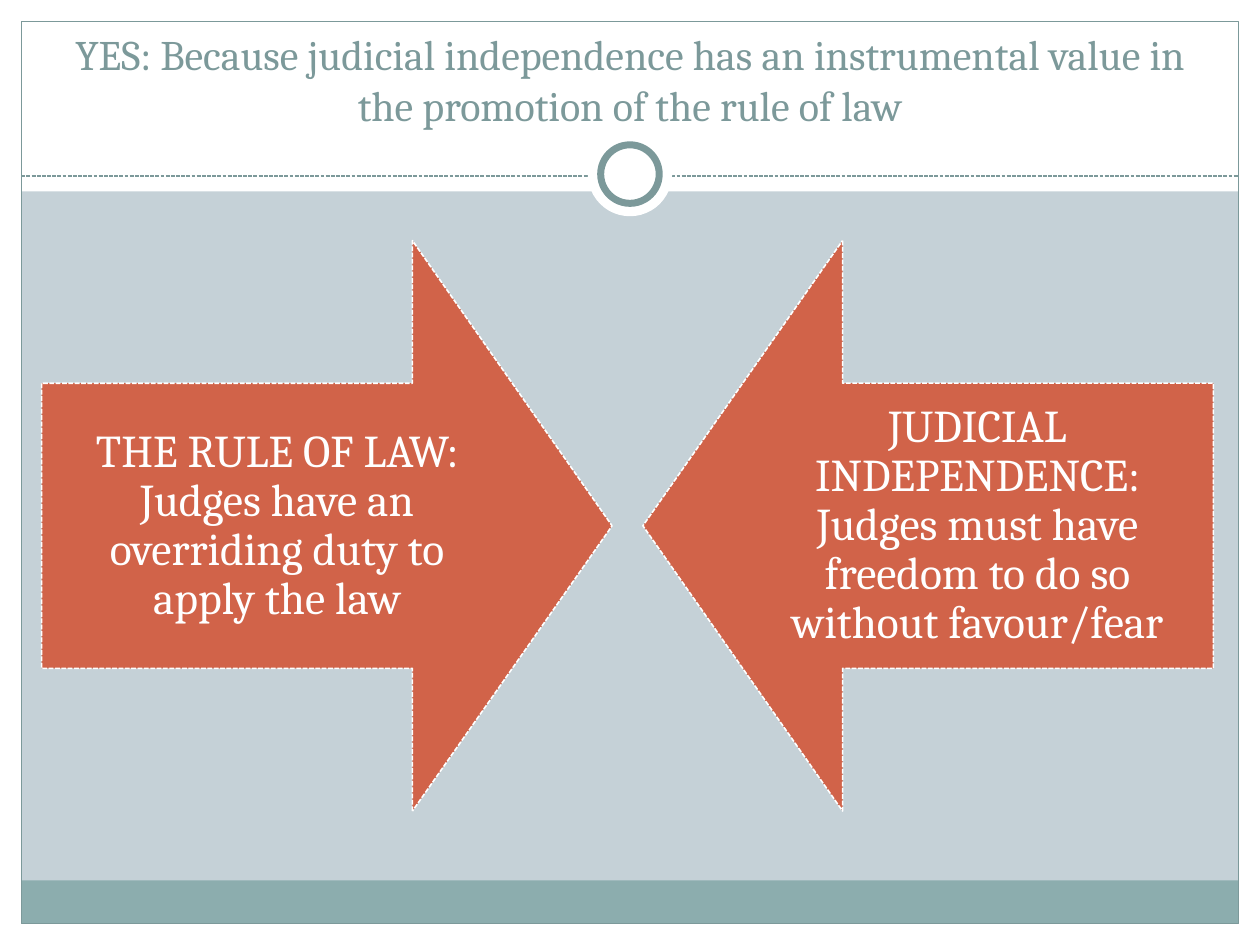
"""Build a slide with two facing arrows on judicial independence and the rule of law."""
import pptx
import pptx.dml.color
import pptx.enum.dml
import pptx.enum.shapes
import pptx.enum.text
import pptx.oxml
import pptx.util
from pptx.util import Cm

COLORS = {"background": "C5D1D7", "white": "FFFFFF", "band": "8CADAE",
          "trim": "7C999A", "arrow": "D16349"}
SHAPES = pptx.enum.shapes.MSO_SHAPE
ANCHORS = pptx.enum.text.MSO_ANCHOR
DASH = pptx.enum.dml.MSO_LINE.SQUARE_DOT
WIDTH, HEIGHT, MARGIN = 25.4, 19.05, 0.43

deck = pptx.Presentation()
deck.slide_width, deck.slide_height = Cm(WIDTH), Cm(HEIGHT)
page = deck.slides.add_slide(deck.slide_layouts[6])
page.background.fill.solid()
page.background.fill.fore_color.rgb = pptx.dml.color.RGBColor.from_string(COLORS["background"])


def add_figure(kind, left, top, width, height, fill=None, line=None, weight=0.75):
    figure = page.shapes.add_shape(kind, Cm(left), Cm(top), Cm(width), Cm(height))
    figure.shadow.inherit = False
    if fill:
        figure.fill.solid()
        figure.fill.fore_color.rgb = pptx.dml.color.RGBColor.from_string(COLORS[fill])
    else:
        figure.fill.background()
    if line:
        figure.line.color.rgb = pptx.dml.color.RGBColor.from_string(COLORS[line])
        figure.line.width = pptx.util.Pt(weight)
    else:
        figure.line.fill.background()
    return figure


def add_text(text, *, left, top, width, height, size, color, anchor,
             inset=(0.25, 0.13), spacing=None):
    box = page.shapes.add_textbox(Cm(left), Cm(top), Cm(width), Cm(height))
    frame = box.text_frame
    frame.word_wrap = True
    frame.vertical_anchor = anchor
    frame.margin_left = frame.margin_right = Cm(inset[0])
    frame.margin_top = frame.margin_bottom = Cm(inset[1])
    para = frame.paragraphs[0]
    para.alignment = pptx.enum.text.PP_ALIGN.CENTER
    para.line_spacing = spacing
    span = para.add_run()
    span.text = text
    span.font.name = "Cambria"
    span.font.size = pptx.util.Pt(size)
    span.font.color.rgb = pptx.dml.color.RGBColor.from_string(COLORS[color])


for left, top, width, height in [(0, HEIGHT - MARGIN, WIDTH, MARGIN),
                                 (0, 0, WIDTH, 3.86),
                                 (0, 0, MARGIN, HEIGHT),
                                 (WIDTH - MARGIN, 0, MARGIN, HEIGHT)]:
    add_figure(SHAPES.RECTANGLE, left, top, width, height, fill="white")

inner_width = WIDTH - 2 * MARGIN
add_figure(SHAPES.RECTANGLE, MARGIN, 17.75, inner_width, 0.87, fill="band")
add_figure(SHAPES.RECTANGLE, MARGIN, MARGIN, inner_width, HEIGHT - 2 * MARGIN, line="trim")

divider = page.shapes.add_connector(pptx.enum.shapes.MSO_CONNECTOR.STRAIGHT,
                                    Cm(MARGIN), Cm(3.55), Cm(WIDTH - MARGIN), Cm(3.55))
divider.line.color.rgb = pptx.dml.color.RGBColor.from_string(COLORS["trim"])
divider.line.width = pptx.util.Pt(0.75)
divider.line.dash_style = DASH
divider.element.spPr.append(pptx.oxml.parse_xml(
    '<a:effectLst xmlns:a="http://schemas.openxmlformats.org/drawingml/2006/main"/>'))

for diameter, line in [(1.7, None), (1.18, "trim")]:
    add_figure(SHAPES.OVAL, (WIDTH - diameter) / 2, 3.51 - diameter / 2,
               diameter, diameter, fill="white", line=line, weight=4)

add_text("YES: Because judicial independence has an instrumental value in "
         "the promotion of the rule of law",
         left=0.85, top=0.64, width=23.7, height=2.1, size=24, color="trim",
         anchor=ANCHORS.BOTTOM)

for text, arrow_left, text_left, rotation in [
        ("THE RULE OF LAW: Judges have an overriding duty to apply the law",
         0.84, 0.84, 270),
        ("JUDICIAL INDEPENDENCE: Judges must have freedom to do so without favour/fear",
         12.96, 14.96, 90)]:
    arrow = add_figure(SHAPES.DOWN_ARROW, arrow_left, 4.85, 11.5, 11.5,
                       fill="arrow", line="white", weight=0.9)
    arrow.rotation = rotation
    arrow.adjustments[0], arrow.adjustments[1] = 0.5, 0.35
    arrow.line.dash_style = DASH
    add_text(text, left=text_left, top=7.73, width=9.5, height=5.75, size=26,
             color="white", anchor=ANCHORS.MIDDLE, inset=(0.51, 0.51), spacing=0.9)

deck.save("out.pptx")
